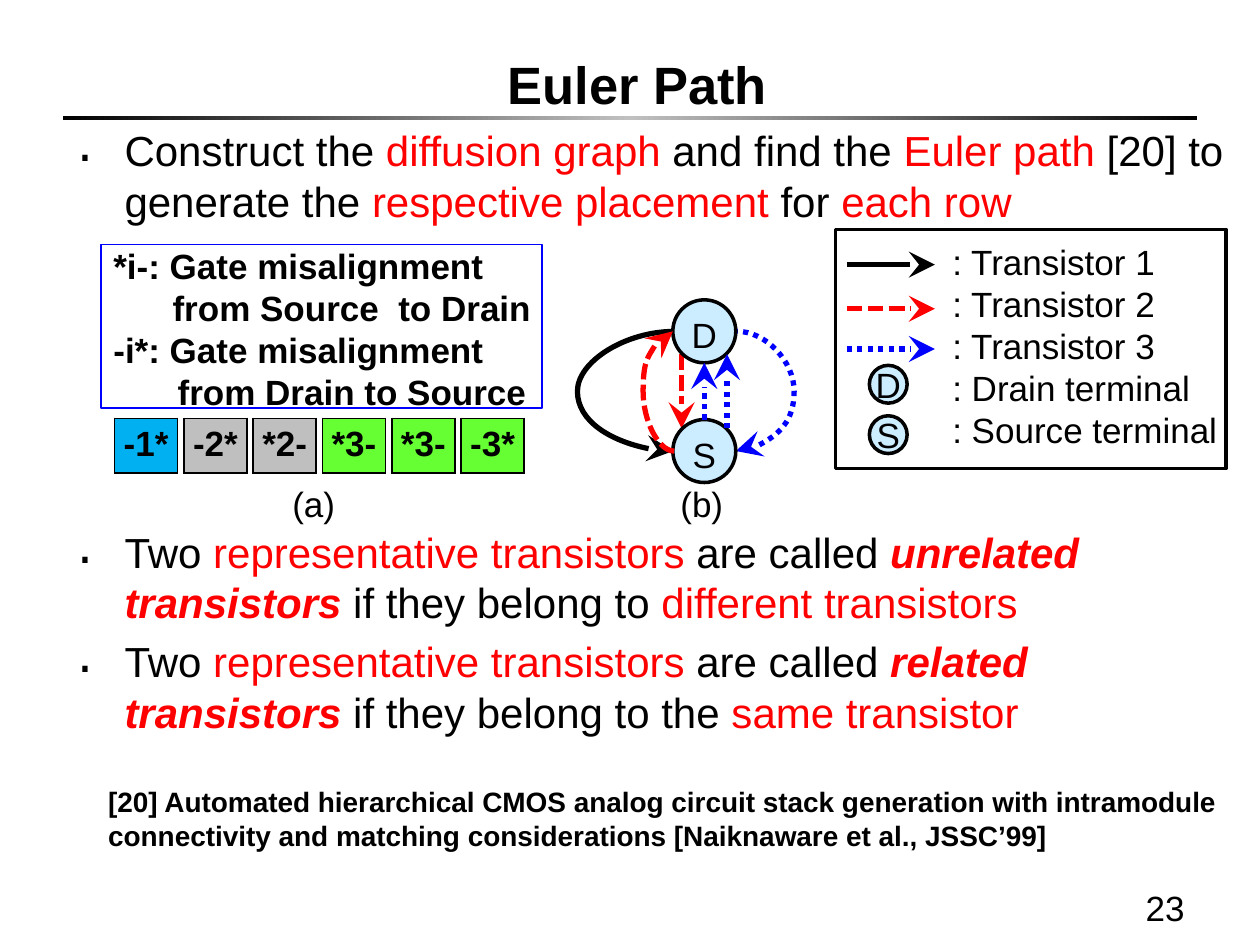
from copy import deepcopy

from lxml.etree import SubElement
from pptx import Presentation
from pptx.dml.color import RGBColor
from pptx.enum.dml import MSO_LINE
from pptx.enum.shapes import MSO_CONNECTOR, MSO_SHAPE
from pptx.enum.text import MSO_ANCHOR, PP_ALIGN
from pptx.oxml.ns import qn
from pptx.util import Inches, Pt

BLACK = RGBColor(0, 0, 0)
SILVER = RGBColor(0xC0, 0xC0, 0xC0)
RED = RGBColor(0xFF, 0, 0)
BLUE = RGBColor(0, 0, 0xFF)
PALE_BLUE = RGBColor(0xCC, 0xEC, 0xFF)
CELL_BLUE = RGBColor(0, 0xB0, 0xF0)
CELL_GRAY = RGBColor(0xBF, 0xBF, 0xBF)
CELL_GREEN = RGBColor(0x66, 0xFF, 0x33)

FONT = "Arial"
DASH = MSO_LINE.SQUARE_DOT
DOT = MSO_LINE.ROUND_DOT

DEFINITIONS = [
    [("Construct the ",), ("diffusion graph ", RED), ("and find the ",),
     ("Euler path ", RED), ("[20] to generate the ",),
     ("respective placement ", RED), ("for ",), ("each row", RED)],
    [("Two ",), ("representative transistors ", RED), ("are called ",),
     ("unrelated transistors ", RED, True), ("if they belong to ",),
     ("different transistors", RED)],
    [("Two ",), ("representative transistors ", RED), ("are called ",),
     ("related transistors ", RED, True), ("if they belong to the ",),
     ("same transistor", RED)],
]
REFERENCE = ("[20] Automated hierarchical CMOS analog circuit stack generation with "
             "intramodule connectivity and matching considerations "
             "[Naiknaware et al., JSSC’99]")
GATES = [("-1*", CELL_BLUE), ("-2*", CELL_GRAY), ("*2-", CELL_GRAY),
         ("*3-", CELL_GREEN), ("*3-", CELL_GREEN), ("-3*", CELL_GREEN)]


def inches(values):
    return [Inches(value) for value in values]


def add_run(paragraph, text, color=BLACK, emphasis=False, size=20, bold=False):
    run = paragraph.add_run()
    run.text = text
    font = run.font
    font.name, font.size = FONT, Pt(size)
    font.bold, font.italic = bold or emphasis, emphasis
    font.color.rgb = color


def write_text(frame, paragraphs, size=20, bold=False, align=PP_ALIGN.LEFT,
               anchor=MSO_ANCHOR.TOP, margins=(0.1, 0.05, 0.1, 0.05), wrap=True):
    frame.word_wrap = wrap
    frame.vertical_anchor = anchor
    (frame.margin_left, frame.margin_top,
     frame.margin_right, frame.margin_bottom) = inches(margins)
    for index, content in enumerate(paragraphs):
        paragraph = frame.add_paragraph() if index else frame.paragraphs[0]
        paragraph.alignment = align
        for run in [(content,)] if isinstance(content, str) else content:
            add_run(paragraph, *run, size=size, bold=bold)


def add_text(slide, box, paragraphs, **text_format):
    frame = slide.shapes.add_textbox(*inches(box)).text_frame
    write_text(frame, paragraphs, **text_format)
    return frame


def set_indent(paragraph, left, first=0):
    properties = paragraph._p.get_or_add_pPr()
    properties.set("marL", str(int(Inches(left))))
    properties.set("indent", str(int(Inches(first))))
    return properties


def add_title(slide, text):
    title = slide.shapes.title
    title.left, title.top, title.width, title.height = inches((0, 0, 10, 0.92))
    write_text(title.text_frame, [text], size=30, bold=True, align=PP_ALIGN.CENTER,
               anchor=MSO_ANCHOR.BOTTOM, margins=(0.1, 0, 0.1, 0))
    paragraph = title.text_frame.paragraphs[0]
    paragraph.line_spacing = 0.9
    set_indent(paragraph, 0.12)


def add_title_rule(slide):
    rule = slide.shapes.add_shape(MSO_SHAPE.RECTANGLE, *inches((0.5, 0.92, 9, 0.03)))
    rule.shadow.inherit = False
    rule.line.fill.background()
    rule.fill.gradient()
    rule.fill.gradient_angle = 0
    stops = rule._element.spPr.find(".//" + qn("a:gsLst"))
    stops.insert(1, deepcopy(stops[0]))
    for stop, color, position in zip(rule.fill.gradient_stops,
                                     (BLACK, SILVER, BLACK), (0, 0.5, 1)):
        stop.color.rgb = color
        stop.position = position


def add_definitions(slide):
    frame = add_text(slide, (0.51, 0.94, 9.49, 5.1), DEFINITIONS, size=24)
    for paragraph, space in zip(frame.paragraphs, (4.8, 172, 4.8)):
        paragraph.space_before = Pt(space)
        properties = set_indent(paragraph, 0.38, -0.38)
        color = SubElement(properties, qn("a:buClr"))
        SubElement(color, qn("a:srgbClr"), val=str(BLACK))
        SubElement(properties, qn("a:buSzPct"), val="120000")
        SubElement(properties, qn("a:buChar"), char="․")


def add_outline(slide, box, color, width):
    shape = slide.shapes.add_shape(MSO_SHAPE.RECTANGLE, *inches(box))
    shape.shadow.inherit = False
    shape.fill.background()
    shape.line.color.rgb = color
    shape.line.width = Pt(width)


def add_terminal(slide, letter, left, top, diameter, drop=0):
    shape = slide.shapes.add_shape(MSO_SHAPE.OVAL, *inches((left, top, diameter, diameter)))
    shape.shadow.inherit = False
    shape.fill.solid()
    shape.fill.fore_color.rgb = PALE_BLUE
    shape.line.color.rgb = BLACK
    shape.line.width = Pt(2)
    write_text(shape.text_frame, [letter], align=PP_ALIGN.CENTER,
               anchor=MSO_ANCHOR.MIDDLE, margins=(0, drop, 0, 0), wrap=False)


def add_arrow(slide, start, end, color, dash=None, kind=MSO_CONNECTOR.STRAIGHT,
              arrow_end="tailEnd"):
    connector = slide.shapes.add_connector(kind, *inches(start + end))
    connector.line.color.rgb = color
    connector.line.width = Pt(3)
    if dash:
        connector.line.dash_style = dash
    SubElement(connector.line._get_or_add_ln(), qn("a:" + arrow_end),
               type="stealth", w="lg", len="lg")
    SubElement(connector._element.spPr, qn("a:effectLst"))
    return connector


def add_curve(slide, left, start_y, end_y, bulge, color, dash=None,
              half_turn=False, arrow_end="tailEnd"):
    width = 0.01
    connector = add_arrow(slide, (left, start_y), (left + width, end_y), color, dash,
                          MSO_CONNECTOR.CURVE, arrow_end)
    properties = connector._element.spPr
    if half_turn:
        properties.find(qn("a:xfrm")).set("rot", "10800000")
    geometry = properties.find(qn("a:prstGeom"))
    adjustments = geometry.find(qn("a:avLst"))
    if adjustments is None:
        adjustments = SubElement(geometry, qn("a:avLst"))
    SubElement(adjustments, qn("a:gd"), name="adj1",
               fmla=f"val {round(bulge / width * 100000)}")


def add_gate(slide, left, text, color):
    frame = slide.shapes.add_table(1, 1, *inches((left, 3.32, 0.5, 0.43)))
    table = frame.table
    table.first_row = table.horz_banding = False
    cell = table.cell(0, 0)
    write_text(cell.text_frame, [text], bold=True, align=PP_ALIGN.CENTER)
    cell.margin_left = cell.margin_right = Inches(0.05)
    cell.margin_top = cell.margin_bottom = Inches(0.05)
    cell.vertical_anchor = MSO_ANCHOR.TOP
    properties = cell._tc.get_or_add_tcPr()
    for side in ("lnL", "lnR", "lnT", "lnB"):
        border = SubElement(properties, qn("a:" + side), w=str(int(Pt(1))))
        fill = SubElement(border, qn("a:solidFill"))
        SubElement(fill, qn("a:srgbClr"), val=str(BLACK))
    cell.fill.solid()
    cell.fill.fore_color.rgb = color
    properties.append(properties.find(qn("a:solidFill")))


def add_placement(slide):
    frame = add_text(slide, (0.9, 1.93, 3.5, 1.35),
                     ["*i-: Gate misalignment", "from Source  to Drain",
                      "-i*: Gate misalignment", "from Drain to Source"],
                     bold=True, anchor=MSO_ANCHOR.MIDDLE, margins=(0, 0, 0, 0))
    set_indent(frame.paragraphs[1], 0.47)
    set_indent(frame.paragraphs[3], 0.51)
    add_outline(slide, (0.8, 1.94, 3.5, 1.3), BLUE, 1)
    for index, (text, color) in enumerate(GATES):
        add_gate(slide, 0.91 + 0.55 * index, text, color)


def add_legend(slide):
    names = ["Transistor 1", "Transistor 2", "Transistor 3",
             "Drain terminal", "Source terminal"]
    add_text(slide, (7.46, 1.86, 2.39, 1.78), [f": {name}" for name in names])
    for y, color, dash in ((2.1, BLACK, None), (2.45, RED, DASH), (2.77, BLUE, DOT)):
        add_arrow(slide, (6.72, y), (7.42, y), color, dash)
    add_outline(slide, (6.63, 1.82, 3.1, 1.9), BLACK, 2)
    add_terminal(slide, "D", 6.9, 2.9, 0.3)
    add_terminal(slide, "S", 6.9, 3.3, 0.3)


def add_diffusion_graph(slide):
    drain_y, source_y = 2.63, 3.58
    add_curve(slide, 5.84, source_y, drain_y, 0.47, BLUE, DOT, arrow_end="headEnd")
    add_curve(slide, 5.34, source_y, drain_y, 0.78, BLACK, half_turn=True)
    add_arrow(slide, (5.41, 2.81), (5.41, 3.4), RED, DASH)
    add_terminal(slide, "D", 5.34, 2.38, 0.5, drop=0.05)
    add_terminal(slide, "S", 5.34, 3.33, 0.5, drop=0.05)
    add_arrow(slide, (5.59, 3.33), (5.59, 2.88), BLUE, DOT)
    add_arrow(slide, (5.77, 3.4), (5.77, 2.81), BLUE, DOT)
    add_curve(slide, 5.34, drain_y, source_y, 0.25, RED, DASH, half_turn=True)


def main():
    presentation = Presentation()
    presentation.slide_width, presentation.slide_height = Inches(10), Inches(7.5)
    slide = presentation.slides.add_slide(presentation.slide_layouts[5])
    add_title_rule(slide)
    add_title(slide, "Euler Path")
    add_definitions(slide)
    add_text(slide, (0.76, 6.18, 9.09, 0.64), [REFERENCE], size=16, bold=True)
    for left, label in ((2.22, "(a)"), (5.3, "(b)")):
        add_text(slide, (left, 3.78, 0.54, 0.44), [label],
                 align=PP_ALIGN.CENTER, wrap=False)
    add_placement(slide)
    add_legend(slide)
    add_diffusion_graph(slide)
    add_text(slide, (7.42, 6.92, 2.08, 0.5), ["23"],
             align=PP_ALIGN.RIGHT, anchor=MSO_ANCHOR.BOTTOM)
    presentation.save("out.pptx")


if __name__ == "__main__":
    main()
